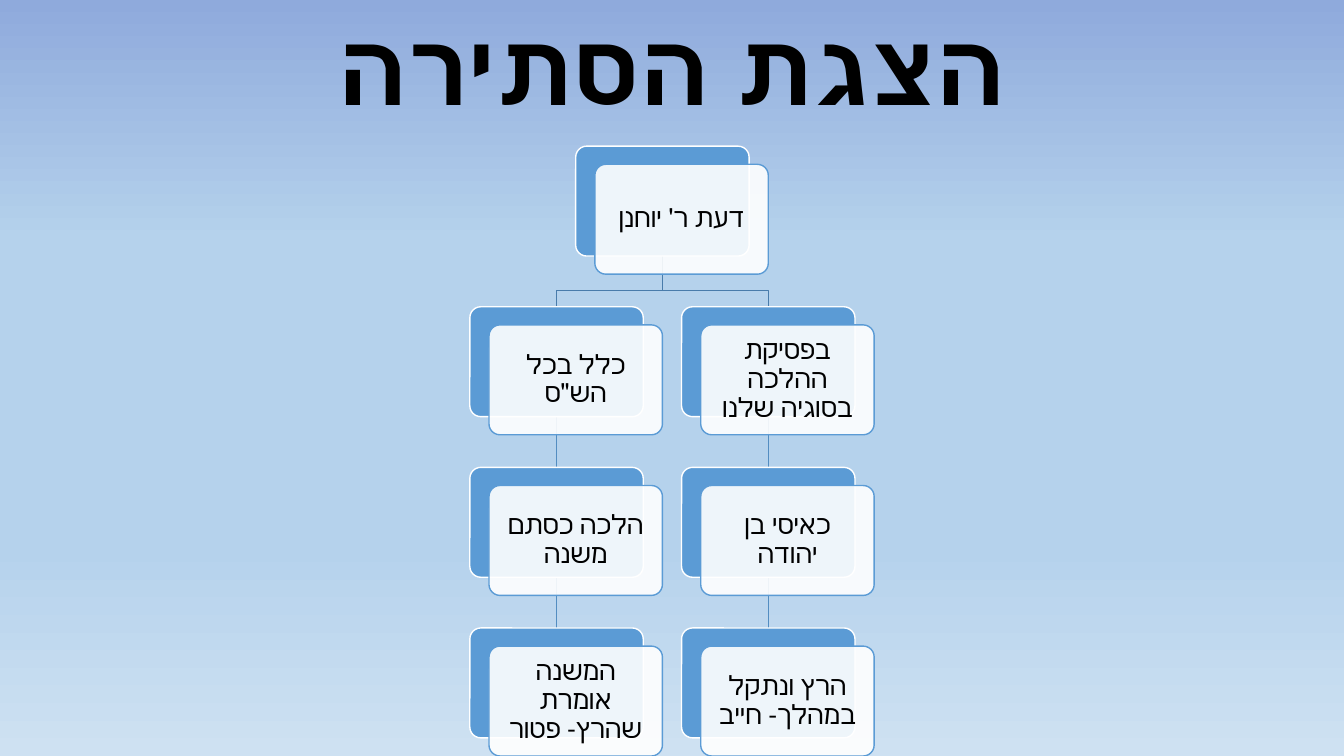
"""Build a slide with a two-branch hierarchy of layered cards."""
import pptx
import pptx.dml.color
import pptx.enum.lang
import pptx.enum.shapes
import pptx.enum.text
import pptx.oxml.ns
import pptx.util

WIDTH, HEIGHT = 13.33, 7.5
LEFT, TOP, LAST_TOP = 4.66, 1.45, 6.23
COLUMN, ROW = 2.1, (LAST_TOP - TOP) / 3
CARD_W, CARD_H = 1.72, 1.09
SHIFT_X, SHIFT_Y = 0.19, 0.18
BLUE, WHITE = "5B9BD5", "FFFFFF"
GRADIENT = [(0, "8FAADC"), (32, "B5D2EC"), (72, "B5D2EC"), (100, "CEE1F2")]
ROOT = "דעת ר' יוחנן"
BRANCHES = [
    ["כלל בכל הש\"ס", "הלכה כסתם משנה", "המשנה אומרת שהרץ- פטור"],
    ["בפסיקת ההלכה בסוגיה שלנו", "כאיסי בן יהודה", "הרץ ונתקל במהלך- חייב"],
]


def inch(*values):
    """Convert inches to slide units."""
    return [pptx.util.Inches(v) for v in values]


def color(value):
    """Turn a hex string into a colour."""
    return pptx.dml.color.RGBColor.from_string(value)


def node(column, row):
    """Give the top left corner of a back card."""
    return LEFT + column * COLUMN, TOP + row * ROW


def set_format(target, values):
    """Set each attribute named in a dict."""
    for name, value in values.items():
        setattr(target, name, value)


def add_child(parent, tag, **attributes):
    """Append an XML element and return it."""
    child = parent.makeelement(pptx.oxml.ns.qn(tag), attributes)
    parent.append(child)
    return child


def set_background(s):
    """Paint the vertical gradient."""
    fill = s.background.fill
    fill.gradient()
    fill.gradient_angle = 270
    stops = s.element.xpath(".//p:bg//a:gsLst")[0]
    stops.clear()
    for position, value in GRADIENT:
        gs = add_child(stops, "a:gs", pos=str(position * 1000))
        add_child(gs, "a:srgbClr", val=value)


def write(sp, text, inset, font):
    """Write centred right-to-left text."""
    tf = sp.text_frame
    margins = dict.fromkeys(
        ["margin_left", "margin_right", "margin_top", "margin_bottom"],
        pptx.util.Inches(inset))
    set_format(tf, {"word_wrap": True, **margins,
                    "vertical_anchor": pptx.enum.text.MSO_ANCHOR.MIDDLE})
    p = tf.paragraphs[0]
    set_format(p, {"alignment": pptx.enum.text.PP_ALIGN.CENTER,
                   "line_spacing": 0.9})
    p._p.get_or_add_pPr().set("rtl", "1")
    r = p.add_run()
    r.text = text
    set_format(r.font, {
        **font, "language_id": pptx.enum.lang.MSO_LANGUAGE_ID.HEBREW})
    r.font.color.rgb = color("000000")


def add_title(s, text):
    """Add the full-width heading."""
    sp = s.shapes.add_textbox(*inch(0, 0, WIDTH, TOP))
    write(sp, text, 0.05,
          {"name": "Roboto", "size": pptx.util.Pt(72), "bold": True})


def set_line(line, value):
    """Give a thin solid line."""
    line.color.rgb = color(value)
    line.width = pptx.util.Pt(1)


def add_panel(s, x, y, fill, line):
    """Add one rounded rectangle."""
    kind = pptx.enum.shapes.MSO_SHAPE.ROUNDED_RECTANGLE
    sp = s.shapes.add_shape(kind, *inch(x, y, CARD_W, CARD_H))
    sp.adjustments[0] = 0.1
    sp.shadow.inherit = False
    sp.fill.solid()
    sp.fill.fore_color.rgb = color(fill)
    set_line(sp.line, line)
    return sp


def add_card(s, column, row, text):
    """Add a blue panel with a translucent text panel over it."""
    x, y = node(column, row)
    add_panel(s, x, y, BLUE, WHITE)
    sp = add_panel(s, x + SHIFT_X, y + SHIFT_Y, WHITE, BLUE)
    clr = sp.element.xpath("./p:spPr/a:solidFill/a:srgbClr")[0]
    add_child(clr, "a:alpha", val="90000")
    write(sp, text, 0.11, {"name": "Calibri", "size": pptx.util.Pt(19)})


def add_link(s, points, line):
    """Draw an open outline through the points."""
    start, *others = [inch(x, y) for x, y in points]
    builder = s.shapes.build_freeform(*start)
    builder.add_line_segments(others, close=False)
    sp = builder.convert_to_shape()
    sp.shadow.inherit = False
    sp.fill.background()
    set_line(sp.line, line)


def add_stem(s, column, row):
    """Join a card to the one below it."""
    x, y = node(column, row)
    x += CARD_W / 2
    add_link(s, [(x, y + CARD_H), (x, y + ROW)], "538DC1")


def add_elbow(s, column):
    """Join the root card to the head of a branch."""
    x0, y0 = node(0.5, 0)
    x1, y1 = node(column, 1)
    x0, x1, bend = x0 + CARD_W / 2, x1 + CARD_W / 2, y1 - 0.16
    add_link(s, [(x0, y0 + CARD_H), (x0, bend), (x1, bend), (x1, y1)],
             "497CAB")


def main():
    """Build and save the slide."""
    prs = pptx.Presentation()
    prs.slide_width, prs.slide_height = inch(WIDTH, HEIGHT)
    s = prs.slides.add_slide(prs.slide_layouts[6])
    set_background(s)
    add_title(s, "הצגת הסתירה")
    for column, branch in enumerate(BRANCHES):
        add_elbow(s, column)
        for row in range(1, len(branch)):
            add_stem(s, column, row)
    add_card(s, 0.5, 0, ROOT)
    for column, branch in enumerate(BRANCHES):
        for row, text in enumerate(branch, 1):
            add_card(s, column, row, text)
    prs.save("out.pptx")


if __name__ == "__main__":
    main()
